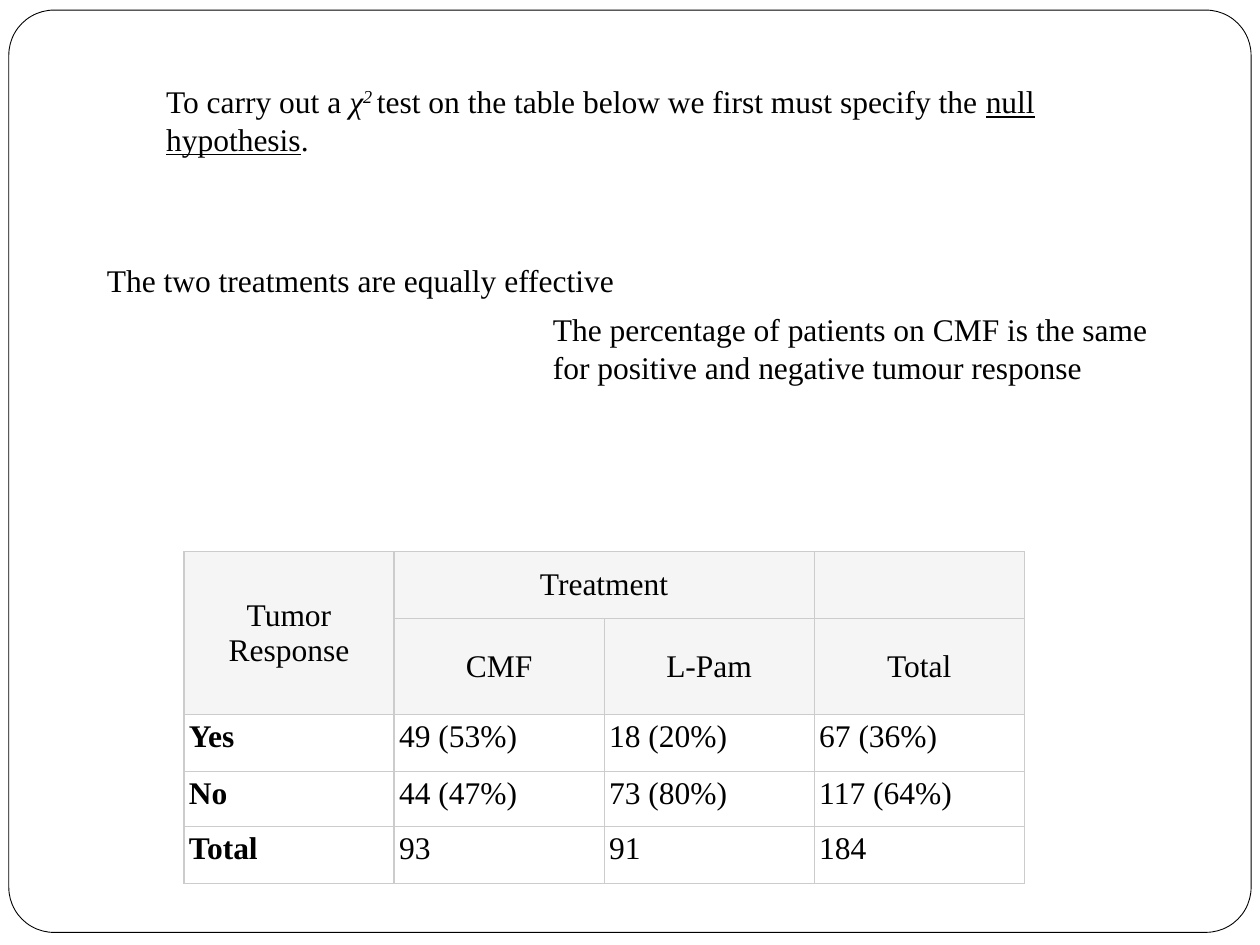
"""Build a slide on the null hypothesis of a chi-squared test."""
from lxml.etree import SubElement
from pptx import Presentation
from pptx.dml.color import RGBColor
from pptx.enum.shapes import MSO_SHAPE
from pptx.enum.text import MSO_ANCHOR, MSO_AUTO_SIZE, PP_ALIGN
from pptx.oxml.ns import qn
from pptx.util import Inches, Pt

THEME = {
    "font": "Times New Roman", "size": Pt(18), "ink": RGBColor(0, 0, 0),
    "paper": RGBColor(255, 255, 255), "header": RGBColor(0xF5, 0xF5, 0xF5),
    "grid": "CCCCCC", "grid_width": Pt(0.75), "frame_width": Pt(0.5),
}


def write(para, spans):
    for text, styles in spans:
        span = para.add_run()
        span.text = text
        formats = {"name": THEME["font"], "size": THEME["size"]} | styles
        raised = formats.pop("raised", None)
        for name, value in formats.items():
            setattr(span.font, name, value)
        span.font.color.rgb = THEME["ink"]
        if raised:
            span.font._element.set("baseline", raised)


def draw_borders(cell):
    properties = cell._tc.get_or_add_tcPr()
    for side in ("lnL", "lnR", "lnT", "lnB"):
        line = SubElement(properties, qn(f"a:{side}"), w=str(THEME["grid_width"]))
        fill = SubElement(line, qn("a:solidFill"))
        SubElement(fill, qn("a:srgbClr"), val=THEME["grid"])


deck = Presentation()
deck.slide_width, deck.slide_height = Inches(10), Inches(7.5)
page = deck.slides.add_slide(deck.slide_layouts[6])

frame = page.shapes.add_shape(
    MSO_SHAPE.ROUNDED_RECTANGLE, Inches(0.07), Inches(0.08), Inches(9.86), Inches(7.32))
frame.adjustments[0] = 0.049
frame.shadow.inherit = False
frame.fill.solid()
frame.fill.fore_color.rgb = THEME["paper"]
frame.line.color.rgb = THEME["ink"]
frame.line.width = THEME["frame_width"]

statements = [
    ((1.22, 0.6, 7.32, 0.71), True, [
        ("To carry out a", {}),
        ("\u00a0χ", {"italic": True}),
        ("2\u00a0", {"italic": True, "raised": "30000"}),
        ("test on the table below we first must specify the\u00a0", {}),
        ("null hypothesis", {"underline": True}),
        (".", {}),
    ]),
    ((0.75, 2.02, 4.36, 0.4), False, [("The two treatments are equally effective", {})]),
    ((4.29, 2.41, 5, 0.71), True, [
        ("The percentage of patients on CMF is the same "
         "for positive and negative tumour response", {}),
    ]),
]
for place, wraps, spans in statements:
    box = page.shapes.add_textbox(*map(Inches, place))
    box.text_frame.word_wrap = wraps
    box.text_frame.auto_size = MSO_AUTO_SIZE.SHAPE_TO_FIT_TEXT
    write(box.text_frame.paragraphs[0], spans)

rows = [
    ["Tumor\vResponse", "Treatment", "", ""],
    ["", "CMF", "L-Pam", "Total"],
    ["Yes", "49 (53%)", "18 (20%)", "67 (36%)"],
    ["No", "44 (47%)", "73 (80%)", "117 (64%)"],
    ["Total", "93", "91", "184"],
]
heights = [0.53, 0.76, 0.45, 0.44, 0.45]
header_rows = 2
table = page.shapes.add_table(
    len(rows), len(rows[0]), Inches(1.46), Inches(4.38),
    Inches(6.67), Inches(sum(heights))).table
for column in table.columns:
    column.width = Inches(6.67 / len(rows[0]))
for row, height in zip(table.rows, heights):
    row.height = Inches(height)
table.cell(0, 0).merge(table.cell(1, 0))
table.cell(0, 1).merge(table.cell(0, 2))

for row_index, row in enumerate(rows):
    is_header = row_index < header_rows
    inset = Inches(0.08 if is_header else 0.04)
    formats = {f"margin_{side}": inset for side in ("left", "right", "top", "bottom")}
    formats["vertical_anchor"] = MSO_ANCHOR.MIDDLE if is_header else MSO_ANCHOR.TOP
    for column_index, text in enumerate(row):
        cell = table.cell(row_index, column_index)
        draw_borders(cell)
        for name, value in formats.items():
            setattr(cell, name, value)
        cell.fill.solid()
        cell.fill.fore_color.rgb = THEME["header" if is_header else "paper"]
        para = cell.text_frame.paragraphs[0]
        para.alignment = PP_ALIGN.CENTER if is_header else PP_ALIGN.LEFT
        for part_index, part in enumerate(text.split("\v") if text else []):
            if part_index:
                para.add_line_break()
            write(para, [(part, {"bold": not is_header and column_index == 0})])

deck.save("out.pptx")
